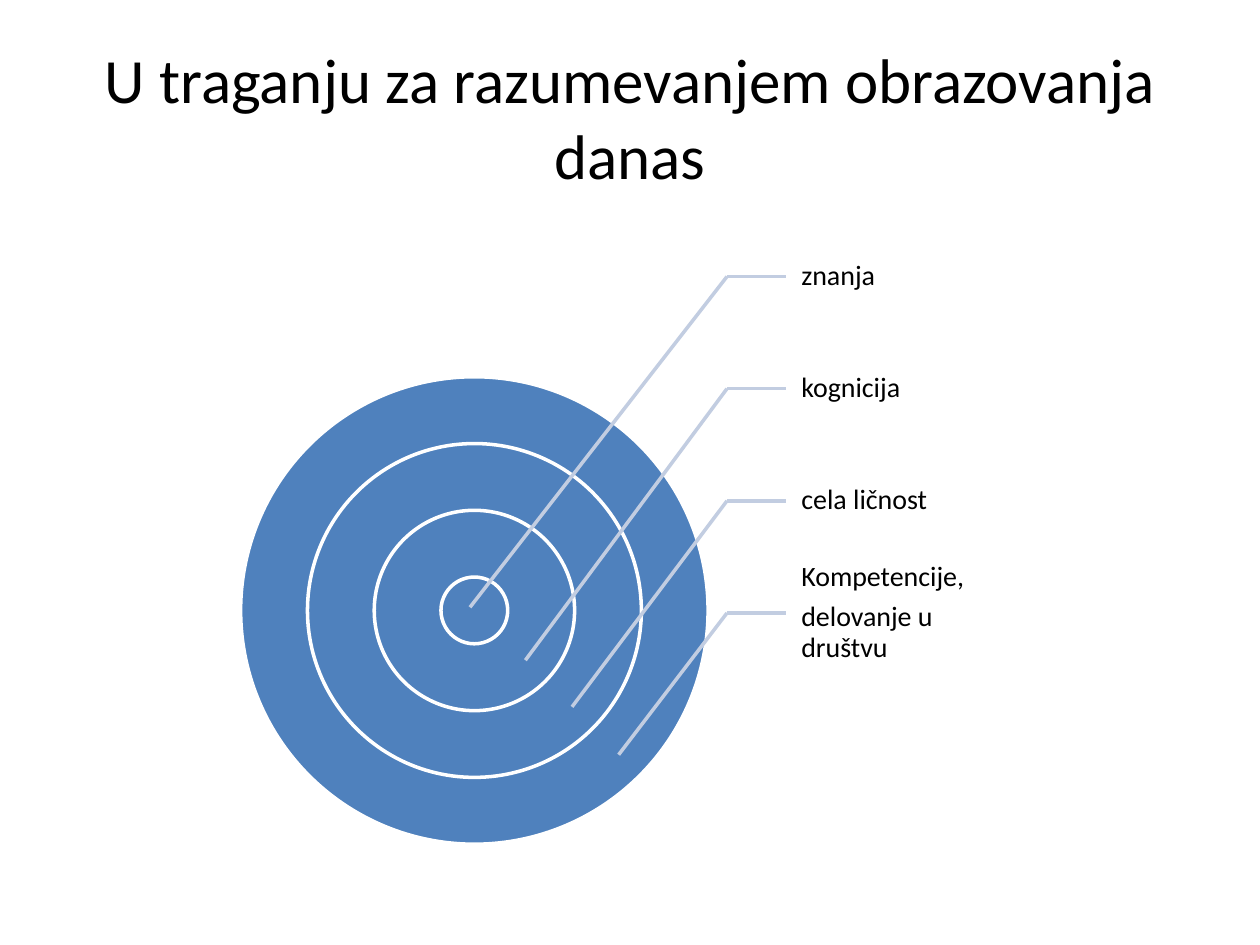
from lxml import etree
from pptx import Presentation
from pptx.dml.color import RGBColor
from pptx.enum.shapes import MSO_CONNECTOR, MSO_SHAPE
from pptx.enum.text import MSO_ANCHOR, PP_ALIGN
from pptx.oxml.ns import qn
from pptx.util import Inches, Pt

OVAL = MSO_SHAPE.OVAL
STRAIGHT = MSO_CONNECTOR.STRAIGHT
MIDDLE = MSO_ANCHOR.MIDDLE
CENTER = PP_ALIGN.CENTER
TITLE_ONLY = 5


def color(value):
    return RGBColor.from_string(value)


def add_span(para, text, size):
    span = para.add_run()
    span.text = text
    span.font.size = Pt(size)
    span.font.name = "Calibri"
    span.font.color.rgb = color("000000")


deck = Presentation()
deck.slide_width, deck.slide_height = Inches(10), Inches(7.5)
page = deck.slides.add_slide(deck.slide_layouts[TITLE_ONLY])

title = page.shapes.title
title.left, title.top = Inches(0.5), Inches(0.3)
title.width, title.height = Inches(9), Inches(1.25)
title.text_frame.vertical_anchor = MIDDLE
title_para = title.text_frame.paragraphs[0]
title_para.alignment = CENTER
add_span(title_para, "U traganju za razumevanjem obrazovanja danas", 36)

# Concentric rings, largest first; radii are 7, 5, 3 and 1 ring steps
target = page.shapes.add_group_shape().shapes
center_x, center_y, ring_step = 3.765, 4.845, 0.265
for steps in (7, 5, 3, 1):
    radius = steps * ring_step
    ring = target.add_shape(OVAL, Inches(center_x - radius), Inches(center_y - radius),
                            Inches(2 * radius), Inches(2 * radius))
    ring.shadow.inherit = False
    ring.fill.solid()
    ring.fill.fore_color.rgb = color("4F81BD")
    ring.line.color.rgb = color("FFFFFF")
    ring.line.width = Pt(2)

# One label row per ring, each with a leader that ends inside its ring
label_left, label_top, label_width, row_height = 6.24, 1.75, 1.86, 0.89
bend_x = 5.77
labels = [
    (["znanja"], (3.73, 4.82)),
    (["kognicija"], (4.17, 5.24)),
    (["cela ličnost"], (4.54, 5.61)),
    (["Kompetencije,", "delovanje u društvu"], (4.91, 5.99)),
]
for row, (lines, ring_point) in enumerate(labels):
    top = label_top + row * row_height
    box = target.add_textbox(Inches(label_left), Inches(top),
                             Inches(label_width), Inches(row_height))
    frame = box.text_frame
    frame.word_wrap = True
    frame.vertical_anchor = MIDDLE
    frame.margin_left = Inches(0.12)
    frame.margin_top = frame.margin_right = frame.margin_bottom = Inches(0.02)
    for index, text in enumerate(lines):
        para = frame.add_paragraph() if index else frame.paragraphs[0]
        para.line_spacing = 0.9
        para.space_after = Pt(5.6)
        add_span(para, text, 16)

    middle = top + row_height / 2
    for end_x, end_y in ((label_left, middle), ring_point):
        leader = target.add_connector(STRAIGHT, Inches(bend_x), Inches(middle),
                                      Inches(end_x), Inches(end_y))
        leader.line.color.rgb = color("C2CDE1")
        leader.line.width = Pt(2)
        etree.SubElement(leader._element.spPr, qn("a:effectLst"))

deck.save("out.pptx")
